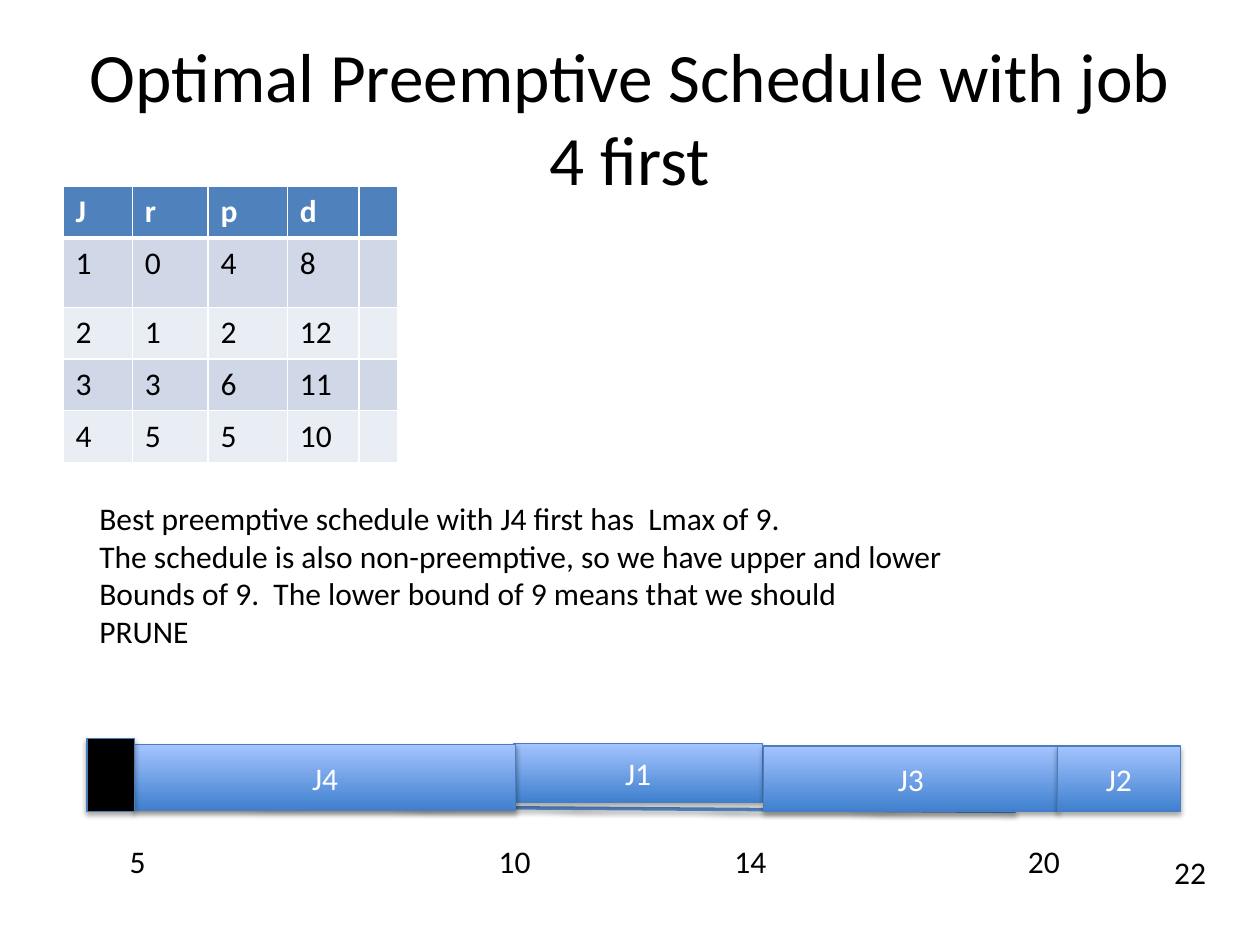
from lxml import etree
from pptx import Presentation
from pptx.dml.color import RGBColor
from pptx.enum.shapes import MSO_CONNECTOR, MSO_SHAPE
from pptx.enum.text import MSO_ANCHOR, MSO_AUTO_SIZE, PP_ALIGN
from pptx.oxml import parse_xml
from pptx.oxml.ns import nsdecls, qn
from pptx.util import Inches, Pt

BLACK = RGBColor(0x00, 0x00, 0x00)
WHITE = RGBColor(0xFF, 0xFF, 0xFF)
HEADER_BLUE = RGBColor(0x4F, 0x81, 0xBD)
BAND_DARK = RGBColor(0xD0, 0xD8, 0xE8)
BAND_LIGHT = RGBColor(0xE9, 0xED, 0xF4)
BAR_BOTTOM = RGBColor(0x3F, 0x80, 0xCE)
BAR_TOP = RGBColor(0xA4, 0xC4, 0xFF)
BAR_OUTLINE = RGBColor(0x4B, 0x7E, 0xBC)

FONT = "Calibri"
TITLE = "Optimal Preemptive Schedule with job 4 first"
JOBS = [
    ["J", "r", "p", "d", ""],
    ["1", "0", "4", "8", ""],
    ["2", "1", "2", "12", ""],
    ["3", "3", "6", "11", ""],
    ["4", "5", "5", "10", ""],
]
COLUMN_WIDTHS = [0.55, 0.6, 0.63, 0.57, 0.31]
ROW_HEIGHTS = [0.41, 0.55, 0.41, 0.41, 0.41]
CONCLUSION = [
    "Best preemptive schedule with J4 first has  Lmax of 9.",
    "The schedule is also non-preemptive, so we have upper and lower",
    "Bounds of 9.  The lower bound of 9 means that we should",
    "PRUNE",
]
BARS = [
    ("J1", 4.08, 5.9, 1.97, 0.47),
    ("J4", 1.07, 5.91, 3.02, 0.52),
    ("J3", 6.06, 5.92, 2.34, 0.52),
    ("J2", 8.39, 5.92, 0.98, 0.52),
]
TIMES = [
    ("5", 0.93, 6.63, 0.33),
    ("10", 3.86, 6.63, 0.46),
    ("14", 5.73, 6.63, 0.46),
    ("20", 8.06, 6.63, 0.46),
    ("22", 9.22, 6.72, 0.46),
]


def write_text(frame, lines, size=18, color=BLACK, bold=False, align=PP_ALIGN.LEFT):
    for index, line in enumerate(lines):
        paragraph = frame.paragraphs[0] if index == 0 else frame.add_paragraph()
        paragraph.alignment = align
        run = paragraph.add_run()
        run.text = line
        run.font.name = FONT
        run.font.size = Pt(size)
        run.font.bold = bold
        run.font.color.rgb = color


def add_shadow(shape, opacity, distance):
    effects = parse_xml(
        f'<a:effectLst {nsdecls("a")}><a:outerShdw blurRad="{Pt(3.1)}" '
        f'dist="{Pt(distance)}" dir="5400000" rotWithShape="0"><a:srgbClr val="{BLACK}">'
        f'<a:alpha val="{opacity * 1000}"/></a:srgbClr></a:outerShdw></a:effectLst>'
    )
    shape._element.spPr.append(effects)


def add_title(slide):
    title = slide.shapes.title
    title.left, title.top = Inches(0.5), Inches(0.3)
    title.width, title.height = Inches(9), Inches(1.25)
    title.text_frame.vertical_anchor = MSO_ANCHOR.MIDDLE
    title.text_frame.auto_size = MSO_AUTO_SIZE.NONE
    write_text(title.text_frame, [TITLE], size=39.6, align=PP_ALIGN.CENTER)


def set_borders(cell, bottom_width):
    properties = cell._tc.get_or_add_tcPr()
    for side, width in zip("LRTB", (1, 1, 1, bottom_width)):
        line = etree.SubElement(properties, qn(f"a:ln{side}"), w=str(Pt(width)))
        fill = etree.SubElement(line, qn("a:solidFill"))
        etree.SubElement(fill, qn("a:srgbClr"), val=str(WHITE))


def add_job_table(slide):
    frame = slide.shapes.add_table(
        len(JOBS), len(COLUMN_WIDTHS), Inches(0.5), Inches(1.48),
        Inches(sum(COLUMN_WIDTHS)), Inches(sum(ROW_HEIGHTS)),
    )
    table = frame.table
    for column, width in zip(table.columns, COLUMN_WIDTHS):
        column.width = Inches(width)
    for index, (row, height, values) in enumerate(zip(table.rows, ROW_HEIGHTS, JOBS)):
        row.height = Inches(height)
        header = index == 0
        band = BAND_DARK if index % 2 else BAND_LIGHT
        for cell, value in zip(row.cells, values):
            set_borders(cell, 3 if header else 1)
            cell.fill.solid()
            cell.fill.fore_color.rgb = HEADER_BLUE if header else band
            if value:
                write_text(cell.text_frame, [value], bold=header,
                           color=WHITE if header else BLACK)


def add_text_box(slide, lines, left, top, width, height, wrap=False):
    box = slide.shapes.add_textbox(Inches(left), Inches(top), Inches(width), Inches(height))
    box.text_frame.word_wrap = wrap
    box.text_frame.auto_size = MSO_AUTO_SIZE.SHAPE_TO_FIT_TEXT
    write_text(box.text_frame, lines)


def add_time_line(slide):
    line = slide.shapes.add_connector(
        MSO_CONNECTOR.STRAIGHT, Inches(1.06), Inches(6.39), Inches(8.06), Inches(6.44)
    )
    line.line.color.rgb = HEADER_BLUE
    line.line.width = Pt(2)
    add_shadow(line, opacity=38, distance=1.6)


def add_block(slide, left, top, width, height):
    block = slide.shapes.add_shape(
        MSO_SHAPE.RECTANGLE, Inches(left), Inches(top), Inches(width), Inches(height)
    )
    block.fill.solid()
    block.fill.fore_color.rgb = BLACK
    block.line.color.rgb = BAR_OUTLINE
    block.line.width = Pt(0.75)
    add_shadow(block, opacity=35, distance=1.8)
    return block


def add_job_bar(slide, name, left, top, width, height):
    bar = add_block(slide, left, top, width, height)
    bar.fill.gradient()
    bar.fill.gradient_angle = 90
    for stop, position, color in zip(bar.fill.gradient_stops, (0, 1), (BAR_BOTTOM, BAR_TOP)):
        stop.position = position
        stop.color.rgb = color
    bar.text_frame.vertical_anchor = MSO_ANCHOR.MIDDLE
    write_text(bar.text_frame, [name], color=WHITE, align=PP_ALIGN.CENTER)


def main():
    presentation = Presentation()
    presentation.slide_width, presentation.slide_height = Inches(10), Inches(7.5)
    slide = presentation.slides.add_slide(presentation.slide_layouts[5])
    add_title(slide)
    add_job_table(slide)
    add_text_box(slide, CONCLUSION, 0.69, 3.91, 6.98, 1.62)
    add_time_line(slide)
    for bar in BARS:
        add_job_bar(slide, *bar)
    add_block(slide, 0.69, 5.86, 0.38, 0.58)
    for time, left, top, width in TIMES:
        add_text_box(slide, [time], left, top, width, 0.4, wrap=time == "10")
    presentation.save("out.pptx")


if __name__ == "__main__":
    main()
